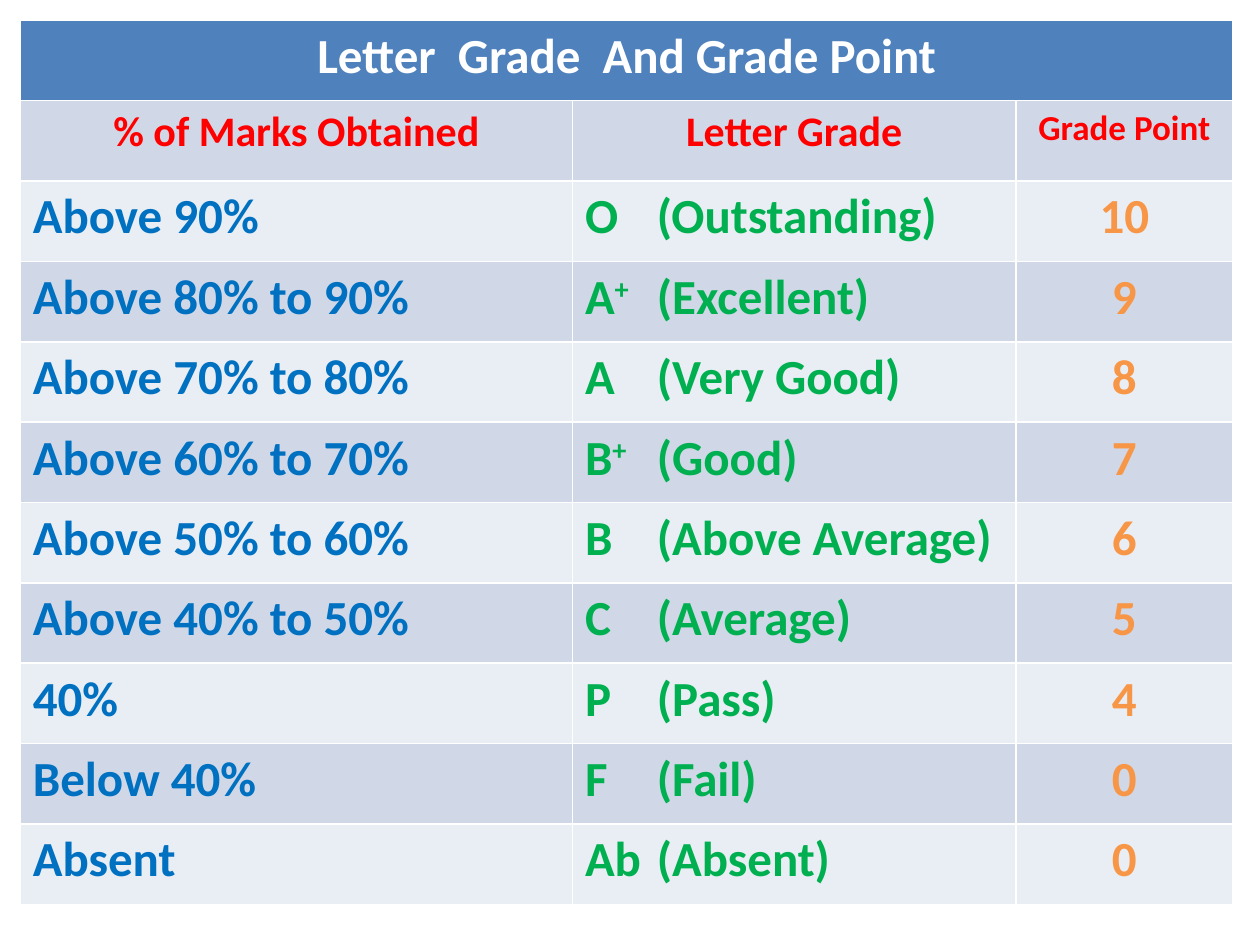
from dataclasses import dataclass

from lxml import etree
from pptx import Presentation
from pptx.dml.color import RGBColor
from pptx.enum.text import PP_ALIGN
from pptx.oxml.ns import qn
from pptx.util import Cm, Pt

LEFT, CENTER = PP_ALIGN.LEFT, PP_ALIGN.CENTER

WHITE = RGBColor(0xFF, 0xFF, 0xFF)
RED = RGBColor(0xFF, 0x00, 0x00)
BLUE = RGBColor(0x00, 0x70, 0xC0)
GREEN = RGBColor(0x00, 0xB0, 0x50)
ORANGE = RGBColor(0xF7, 0x96, 0x46)
TITLE_FILL = RGBColor(0x4F, 0x81, 0xBD)
BANDS = (RGBColor(0xE9, 0xED, 0xF4), RGBColor(0xD0, 0xD8, 0xE8))

FONT = "Calibri"
MARGIN = Cm(0.41)
COL_WIDTHS = (Cm(11.13), Cm(8.94), Cm(4.37))
ROW_HEIGHT = Cm(1.62)
MEANING_TAB = Cm(1.45)


@dataclass(frozen=True)
class Grade:
    marks: str
    letter: str
    sign: str
    meaning: str
    point: int


@dataclass(frozen=True)
class Style:
    color: RGBColor
    size: int = 28
    align: PP_ALIGN = CENTER


TITLE = Style(WHITE)
HEADERS = (
    ("% of Marks Obtained", Style(RED, 24)),
    ("Letter Grade", Style(RED, 24)),
    ("Grade Point", Style(RED, 20)),
)
MARKS = Style(BLUE, align=LEFT)
LETTER = Style(GREEN, align=LEFT)
POINT = Style(ORANGE)

GRADES = (
    Grade("Above 90%", "O", "", "(Outstanding)", 10),
    Grade("Above 80% to 90%", "A", "+", "(Excellent)", 9),
    Grade("Above 70% to 80%", "A", "", "(Very Good)", 8),
    Grade("Above 60% to 70%", "B", "+", "(Good)", 7),
    Grade("Above 50% to 60%", "B", "", "(Above Average)", 6),
    Grade("Above 40% to 50%", "C", "", "(Average)", 5),
    Grade("40%", "P", "", "(Pass)", 4),
    Grade("Below 40%", "F", "", "(Fail)", 0),
    Grade("Absent", "Ab", "", "(Absent)", 0),
)


def add_run(p, text: str, style: Style, superscript: bool = False) -> None:
    r = p.add_run()
    r.text = text
    r.font.name = FONT
    r.font.size = Pt(style.size)
    r.font.bold = True
    r.font.color.rgb = style.color
    if superscript:
        r.font._element.set("baseline", "30000")


def fill_cell(cell, fill: RGBColor, text: str, style: Style):
    """Fill a cell, write its first run and return its paragraph."""
    cell.fill.solid()
    cell.fill.fore_color.rgb = fill
    p = cell.text_frame.paragraphs[0]
    p.alignment = style.align
    add_run(p, text, style)
    return p


def add_tab_stop(p, position: int) -> None:
    tabs = etree.SubElement(p._p.get_or_add_pPr(), qn("a:tabLst"))
    etree.SubElement(tabs, qn("a:tab"), pos=str(position), algn="l")


def fill_grade_row(table, row: int, grade: Grade) -> None:
    fill = BANDS[row % 2]
    fill_cell(table.cell(row, 0), fill, grade.marks, MARKS)
    p = fill_cell(table.cell(row, 1), fill, grade.letter, LETTER)
    add_tab_stop(p, MEANING_TAB)
    if grade.sign:
        add_run(p, grade.sign, LETTER, superscript=True)
    add_run(p, "\t" + grade.meaning, LETTER)
    fill_cell(table.cell(row, 2), fill, str(grade.point), POINT)


def main() -> None:
    prs = Presentation()
    prs.slide_width, prs.slide_height = Cm(25.4), Cm(19.05)
    s = prs.slides.add_slide(prs.slide_layouts[6])

    # Table grid
    n_rows = len(GRADES) + 2
    table = s.shapes.add_table(n_rows, len(COL_WIDTHS), MARGIN, MARGIN,
                               sum(COL_WIDTHS), ROW_HEIGHT * n_rows).table
    for column, width in zip(table.columns, COL_WIDTHS):
        column.width = width
    for row in table.rows:
        row.height = ROW_HEIGHT

    # Title row across all columns
    title = table.cell(0, 0)
    title.merge(table.cell(0, len(COL_WIDTHS) - 1))
    fill_cell(title, TITLE_FILL, "Letter  Grade  And Grade Point", TITLE)

    # Column headings
    for col, (text, style) in enumerate(HEADERS):
        fill_cell(table.cell(1, col), BANDS[1], text, style)

    # Grades
    for row, grade in enumerate(GRADES, start=2):
        fill_grade_row(table, row, grade)

    prs.save("out.pptx")


if __name__ == "__main__":
    main()
